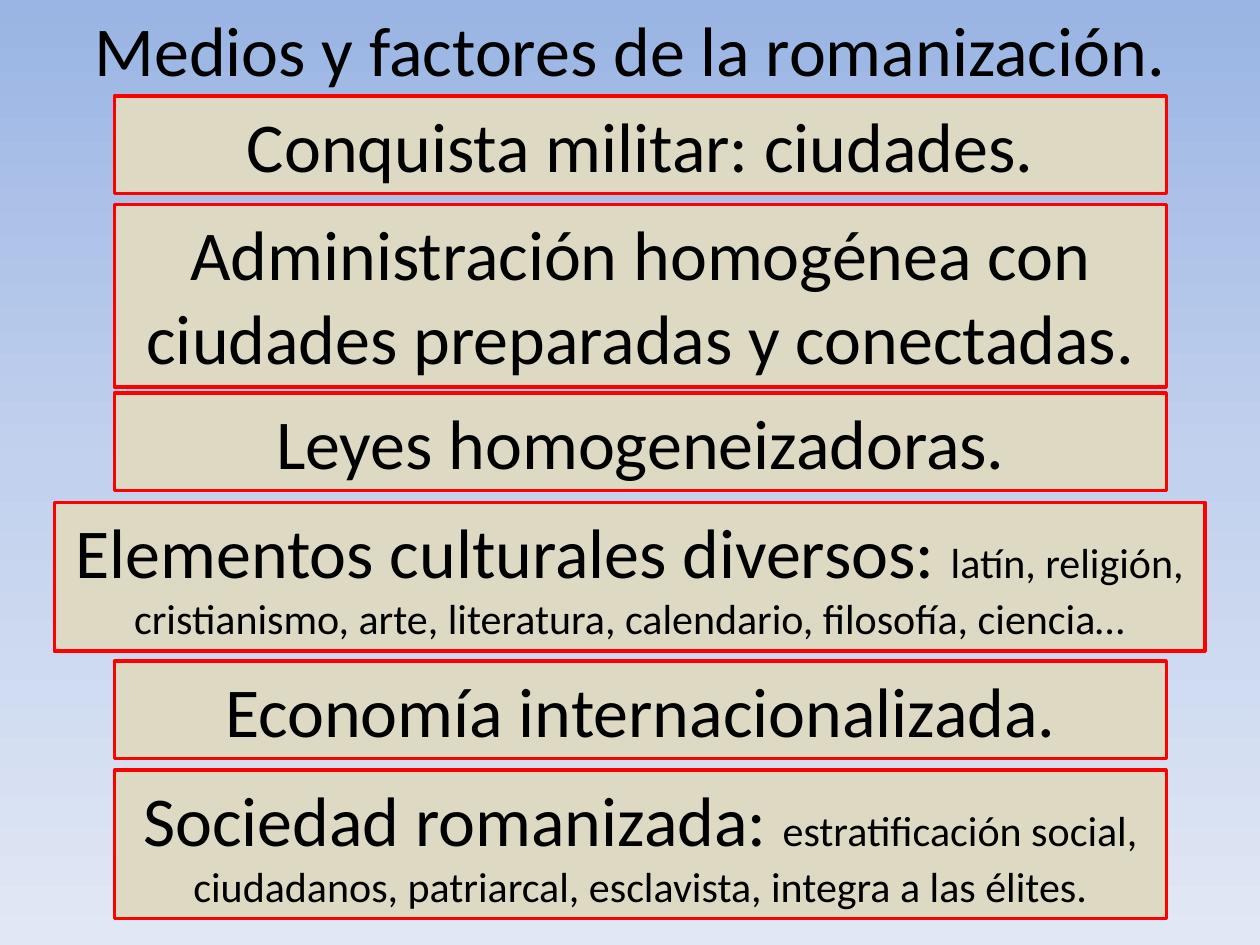
from copy import deepcopy
from pptx import Presentation
from pptx.dml.color import RGBColor
from pptx.enum.shapes import MSO_SHAPE
from pptx.enum.text import MSO_ANCHOR, MSO_AUTO_SIZE, PP_ALIGN
from pptx.oxml.ns import qn
from pptx.util import Pt

BLACK = RGBColor(0x00, 0x00, 0x00)
RED = RGBColor(0xFF, 0x00, 0x00)
SAND = RGBColor(0xDD, 0xD9, 0xC3)
SKY = [
    (0, RGBColor(0x9A, 0xB5, 0xE4)),
    (0.5, RGBColor(0xC2, 0xD1, 0xED)),
    (1, RGBColor(0xE1, 0xE8, 0xF5)),
]

FRAME = {
    "word_wrap": True,
    "auto_size": MSO_AUTO_SIZE.SHAPE_TO_FIT_TEXT,
    "vertical_anchor": MSO_ANCHOR.TOP,
}
FONT = {"name": "Calibri", "size": Pt(40)}
SMALL = {"name": "Calibri", "size": Pt(24)}

LEFT, WIDTH = 65.5, 601
ONE, MIXED, TWO = 55.7, 85, 104.2
BOXES = [
    (LEFT, 54.9, WIDTH, ONE, "Conquista militar: ciudades.", ""),
    (LEFT, 117, WIDTH, TWO,
     "Administración homogénea con ciudades preparadas y conectadas.", ""),
    (LEFT, 224.7, WIDTH, ONE, "Leyes homogeneizadoras.", ""),
    (31, 287, 657.5, MIXED, "Elementos culturales diversos: ",
     "latín, religión, cristianismo, arte, literatura, calendario, filosofía, ciencia…"),
    (LEFT, 377.8, WIDTH, ONE, "Economía internacionalizada.", ""),
    (LEFT, 440, WIDTH, MIXED, "Sociedad romanizada: ",
     "estratificación social, ciudadanos, patriarcal, esclavista, integra a las élites."),
]


def style(item, values):
    for name, value in values.items():
        setattr(item, name, value)


def write(shape, head, tail=""):
    style(shape.text_frame, FRAME)
    para = shape.text_frame.paragraphs[0]
    para.alignment = PP_ALIGN.CENTER
    for text, values in ((head, FONT), (tail, SMALL)):
        if text:
            run = para.add_run()
            run.text = text
            style(run.font, values)
            run.font.color.rgb = BLACK


deck = Presentation()
style(deck, {"slide_width": Pt(720), "slide_height": Pt(540)})
slide = deck.slides.add_slide(deck.slide_layouts[6])

back = slide.background.fill
back.gradient()
back.gradient_angle = 270
stops = slide.element.find(".//" + qn("a:gsLst"))
stops.insert(1, deepcopy(stops[0]))
for stop, (place, color) in zip(back.gradient_stops, SKY):
    stop.position = place
    stop.color.rgb = color

title = slide.shapes.add_textbox(Pt(0), Pt(0), Pt(720), Pt(ONE))
write(title, "Medios y factores de la romanización.")

for left, top, width, height, head, tail in BOXES:
    box = slide.shapes.add_shape(
        MSO_SHAPE.RECTANGLE, Pt(left), Pt(top), Pt(width), Pt(height))
    box.shadow.inherit = False
    box.fill.solid()
    box.fill.fore_color.rgb = SAND
    box.line.color.rgb = RED
    box.line.width = Pt(2)
    write(box, head, tail)

deck.save("out.pptx")
